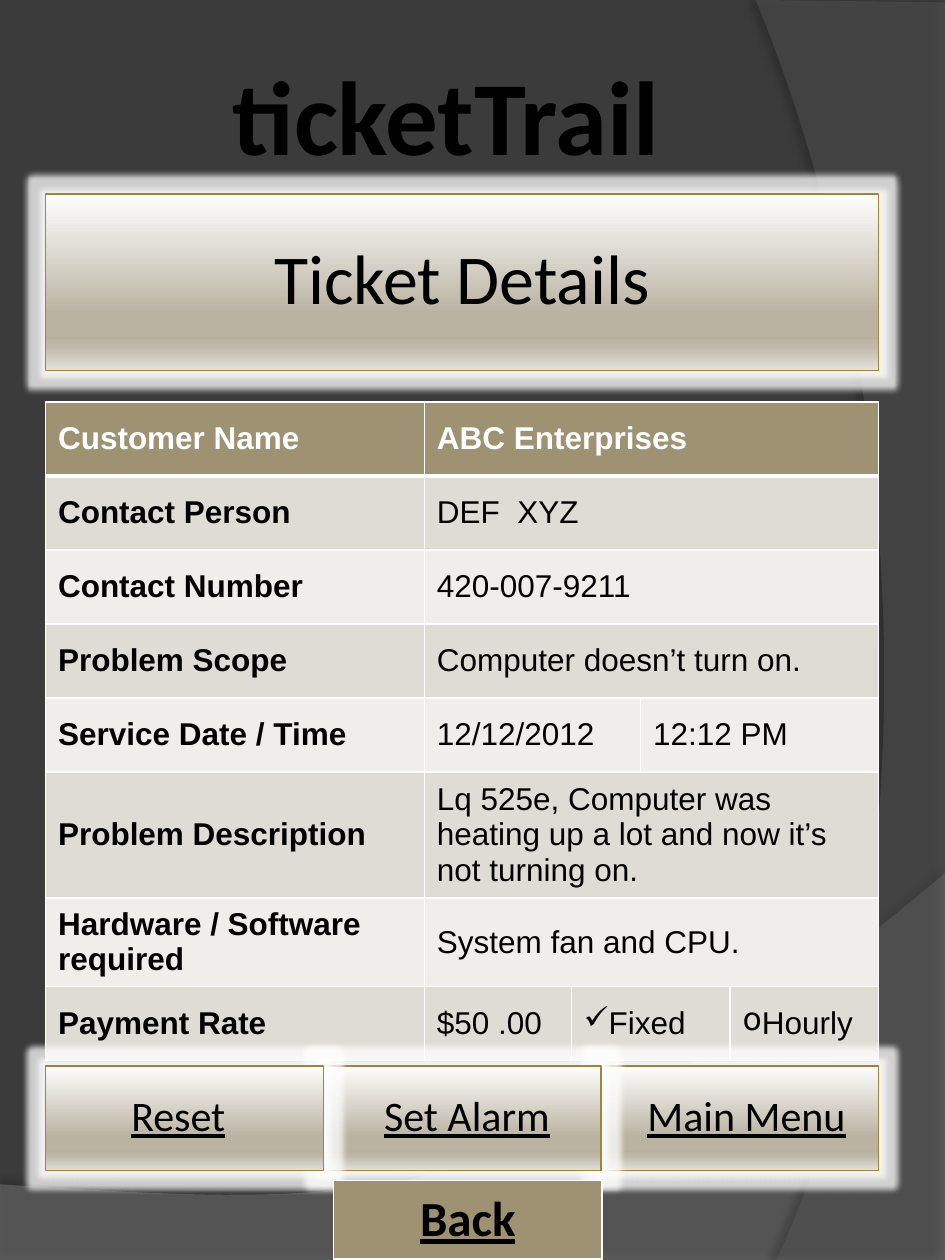
import lxml.etree
import pptx
import pptx.dml.color
import pptx.enum.shapes
import pptx.enum.text
import pptx.oxml.ns
import pptx.util
from dataclasses import dataclass

Pt = pptx.util.Pt
qn = pptx.oxml.ns.qn
PP_ALIGN = pptx.enum.text.PP_ALIGN
MIDDLE = pptx.enum.text.MSO_ANCHOR.MIDDLE


@dataclass(frozen=True)
class Theme:
    back: str = "3B3B3B"
    low_wave: str = "7F7F7F"
    side_wave: str = "5E5E5E"
    black: str = "000000"
    white: str = "FFFFFF"
    accent: str = "9E9273"
    bands: tuple = ("F0EEEB", "DFDCD5")
    outline: str = "A1843A"
    sheen: tuple = ((0, "FEFEFE"), (68, "BAB3A2"), (81, "B8B19F"),
                    (86, "BFB8A9"), (100, "E3E1DB"))
    head_font: str = "Calibri"
    body_font: str = "Arial"
    title: int = 60
    heading: int = 40
    back_label: int = 28
    button: int = 24
    body: int = 18


def rgb(color):
    return pptx.dml.color.RGBColor.from_string(color)


def child(parent, tag, **attrs):
    return lxml.etree.SubElement(parent, qn(tag), {k: str(v) for k, v in attrs.items()})


def color_child(parent, color, alpha=100):
    c = child(parent, "a:srgbClr", val=color)
    if alpha < 100:
        child(c, "a:alpha", val=alpha * 1000)


def bezier(p0, p1, p2, p3, steps=40):
    """Points along a cubic curve, without its start."""
    for i in range(1, steps + 1):
        t = i / steps
        u = 1 - t
        yield tuple(u**3 * a + 3 * u * u * t * b + 3 * u * t * t * c + t**3 * d
                    for a, b, c, d in zip(p0, p1, p2, p3))


def write(tf, text, *, size, font, color, bold=False, underline=False,
          align=PP_ALIGN.LEFT, spacing=None, bullet=None, hang=0):
    p = tf.paragraphs[0]
    p.alignment = align
    if spacing:
        p.line_spacing = spacing
    if bullet:
        pPr = p._p.get_or_add_pPr()
        pPr.set("marL", str(Pt(hang)))
        pPr.set("indent", str(-Pt(hang)))
        child(pPr, "a:buChar", char=bullet)
    r = p.add_run()
    r.text = text
    r.font.size, r.font.name = Pt(size), font
    r.font.bold, r.font.underline = bold, underline
    r.font.color.rgb = rgb(color)


class Page:
    def __init__(self, slide, theme):
        self.s, self.theme = slide, theme
        slide.background.fill.solid()
        slide.background.fill.fore_color.rgb = rgb(theme.back)

    def wave(self, points, color, alpha, shade, blur, dist, angle):
        pts = [(Pt(x), Pt(y)) for x, y in points]
        fb = self.s.shapes.build_freeform(*pts[0])
        fb.add_line_segments(pts[1:], close=True)
        sp = fb.convert_to_shape()
        sp.fill.solid()
        sp.fill.fore_color.rgb = rgb(color)
        spPr = sp._element.spPr
        child(spPr.find(".//" + qn("a:srgbClr")), "a:alpha", val=alpha * 1000)
        sp.line.fill.background()
        sp.shadow.inherit = False
        shadow = child(spPr.find(qn("a:effectLst")), "a:outerShdw", blurRad=Pt(blur),
                       dist=Pt(dist), dir=angle * 60000, algn="ctr", rotWithShape=0)
        color_child(shadow, self.theme.black, shade)

    def text(self, box, text, inset=None, anchor=None, **fmt):
        tf = self.s.shapes.add_textbox(*map(Pt, box)).text_frame
        self.fill_frame(tf, text, inset, anchor, **fmt)

    def fill_frame(self, tf, text, inset=None, anchor=None, **fmt):
        tf.word_wrap = True
        if anchor is not None:
            tf.vertical_anchor = anchor
        if inset is not None:
            tf.margin_left = tf.margin_right = tf.margin_top = tf.margin_bottom = Pt(inset)
        write(tf, text, font=self.theme.head_font, color=self.theme.black,
              align=PP_ALIGN.CENTER, **fmt)

    def panel(self, box):
        """A glowing metallic rectangle."""
        sp = self.s.shapes.add_shape(pptx.enum.shapes.MSO_SHAPE.RECTANGLE, *map(Pt, box))
        sp.fill.gradient()
        sp.fill.gradient_angle = 270
        spPr = sp._element.spPr
        stops = spPr.find(".//" + qn("a:gsLst"))
        for gs in list(stops):
            stops.remove(gs)
        for pos, color in self.theme.sheen:
            color_child(child(stops, "a:gs", pos=pos * 1000), color)
        sp.line.color.rgb = rgb(self.theme.outline)
        sp.line.width = Pt(0.75)
        sp.shadow.inherit = False
        glow = child(spPr.find(qn("a:effectLst")), "a:glow", rad=Pt(7))
        color_child(glow, self.theme.white, 75)
        return sp

    def table(self, left, top, cols, row_height, rows):
        t = self.s.shapes.add_table(rows, len(cols), Pt(left), Pt(top), Pt(sum(cols)),
                                    Pt(row_height * rows)).table
        t.first_row = t.horz_banding = False
        for col, width in zip(t.columns, cols):
            col.width = Pt(width)
        for row in t.rows:
            row.height = Pt(row_height)
        return t

    def cell(self, cell, text, fill, bottom=1, **fmt):
        tcPr = cell._tc.get_or_add_tcPr()
        for side, width in zip("LRTB", (1, 1, 1, bottom)):
            ln = child(tcPr, "a:ln" + side, w=Pt(width))
            color_child(child(ln, "a:solidFill"), self.theme.white)
        cell.fill.solid()
        cell.fill.fore_color.rgb = rgb(fill)
        cell.vertical_anchor = MIDDLE
        if text:
            write(cell.text_frame, text, **fmt)


# Each value is (text, columns spanned, extra format)
TICKET = [
    ("Customer Name", [("ABC Enterprises", 4, {})]),
    ("Contact Person", [("DEF  XYZ", 4, {})]),
    ("Contact Number", [("420-007-9211", 4, {})]),
    ("Problem Scope", [("Computer doesn’t turn on.", 4, {})]),
    ("Service Date / Time", [("12/12/2012", 2, {}), ("12:12 PM", 2, {})]),
    ("Problem Description",
     [("Lq 525e, Computer was heating up a lot and now it’s not turning on.", 4, {})]),
    ("Hardware / Software required", [("System fan and CPU.", 4, {})]),
    ("Payment Rate", [("$50 .00", 1, {}), ("Fixed", 2, {"bullet": "✓", "hang": 13.5}),
                      ("Hourly", 1, {"bullet": "o"})]),
]


def add_ticket(page):
    th = page.theme
    t = page.table(26, 229.7, (216.5, 84, 39.5, 51.2, 85), 42.3, len(TICKET))
    for i, (label, values) in enumerate(TICKET):
        header = i == 0
        fill = th.accent if header else th.bands[i % 2]
        color = th.white if header else th.black
        c = 0
        for text, span, extra in [(label, 1, {}), *values]:
            if span > 1:
                t.cell(i, c).merge(t.cell(i, c + span - 1))
            for k in range(span):
                page.cell(t.cell(i, c + k), "" if k else text, fill,
                          bottom=3 if header else 1, size=th.body, font=th.body_font,
                          color=color, bold=header or c == 0, **extra)
            c += span


def main():
    prs = pptx.Presentation()
    prs.slide_width, prs.slide_height = Pt(540), Pt(720)
    th = Theme()
    page = Page(prs.slides.add_slide(prs.slide_layouts[6]), th)

    page.wave([(0, 676.8), (0, 720), (540, 720), (540, 499),
               *bezier((540, 499), (301.7, 699.8), (211, 689.8), (0, 676.8))],
              th.low_wave, 45, shade=35, blur=4, dist=3.5, angle=270)
    page.wave([(540, 1.4), (540, 720), (443.5, 720),
               *bezier((443.5, 720), (504.7, 594.7), (549.4, 288.7), (432, 0))],
              th.side_wave, 40, shade=45, blur=4, dist=4, angle=180)

    page.text((41, 25.2, 427.7, 80), "ticketTrail", size=th.title, bold=True)
    add_ticket(page)

    label = {"inset": 7.2, "anchor": MIDDLE, "spacing": 0.9}
    heading = page.panel((26, 110.9, 476, 100.8))
    page.fill_frame(heading.text_frame, "Ticket Details", size=th.heading, **label)

    top, width, height = 609.1, 158.7, 59.8
    for i, (text, left) in reversed(list(enumerate(
            [("Reset", 31.7), ("Set Alarm", 196.6), ("Main Menu", 356.4)]))):
        page.panel((26 + i * width, top, width, height))
        page.text((left, top, 140.4, height), text, size=th.button, underline=True, **label)

    t = page.table(190.6, 674.6, (153.4,), 45.4, 1)
    page.cell(t.cell(0, 0), "Back", th.accent, bottom=3, size=th.back_label,
              font=th.head_font, color=th.black, bold=True, underline=True,
              align=PP_ALIGN.CENTER)
    prs.save("out.pptx")


if __name__ == "__main__":
    main()
